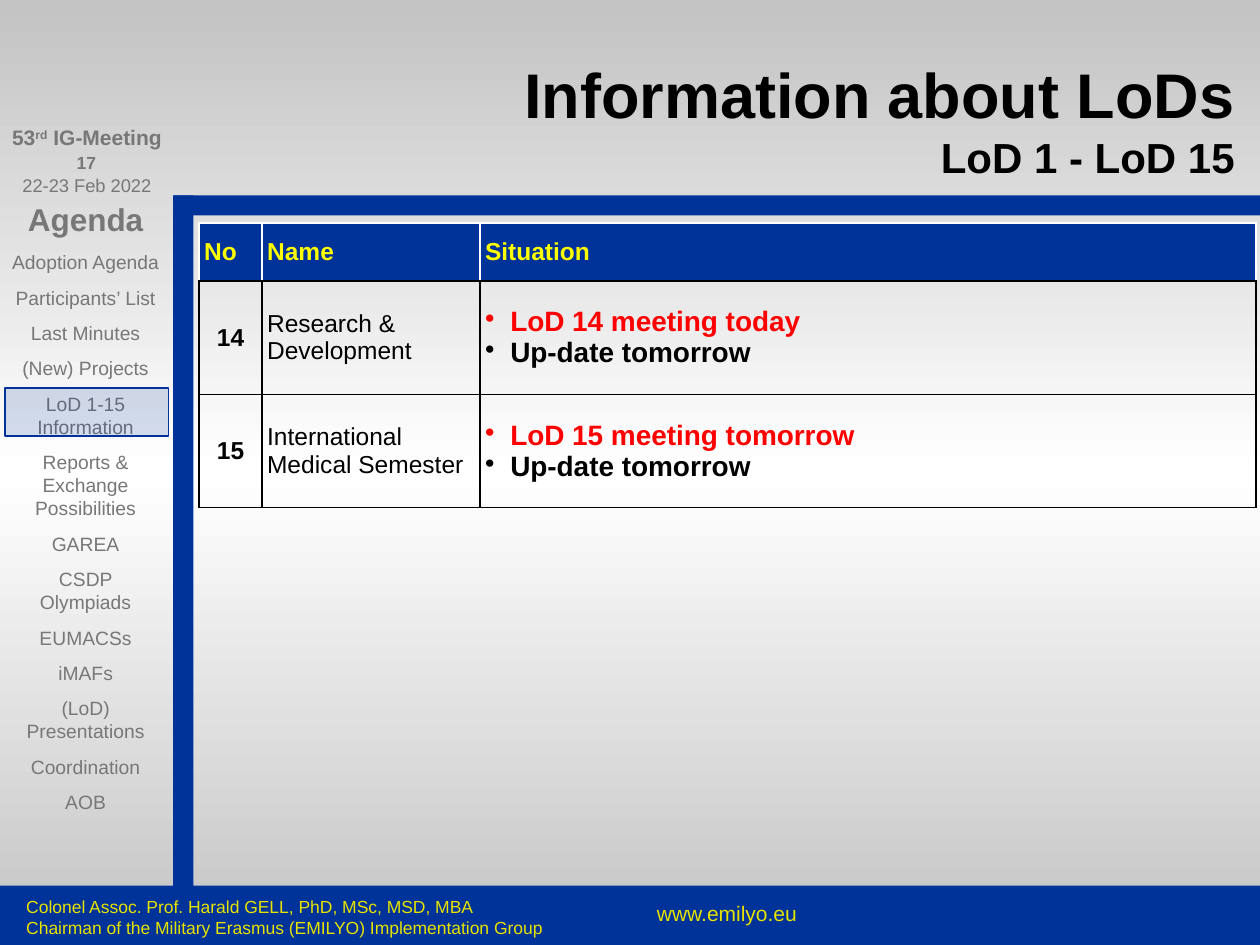
from dataclasses import dataclass
from typing import Optional

from lxml import etree
from pptx import Presentation
from pptx import util as u
from pptx.dml.color import RGBColor
from pptx.enum import shapes, text
from pptx.oxml import parse_xml
from pptx.oxml.ns import nsdecls, qn


@dataclass(frozen=True)
class Theme:
    font: str = "Arial"
    blue: str = "003399"
    grey: str = "777777"
    silver: str = "C3C3C3"
    white: str = "FFFFFF"
    black: str = "000000"
    red: str = "FF0000"
    header: str = "FFFF00"
    footer: str = "E7E200"
    title: float = 36
    subtitle: float = 24
    agenda: float = 18
    strong: float = 16
    table: float = 14
    meeting: float = 12
    item: float = 11
    date: float = 10.5
    small: float = 10


@dataclass(frozen=True)
class Area:
    """Left, top, width and height in percent of the slide."""
    left: float
    top: float
    width: float
    height: float

    def emu(self) -> tuple:
        return across(self.left), down(self.top), across(self.width), down(self.height)


@dataclass(frozen=True)
class Run:
    text: str
    size: float
    color: str
    bold: bool = False
    baseline: int = 0


@dataclass(frozen=True)
class Para:
    runs: tuple
    align: text.PP_ALIGN = text.PP_ALIGN.LEFT
    before: float = 0
    after: float = 0
    bullet: bool = False


T = Theme()
W, H = u.Inches(10), u.Inches(7.5)
CENTER, RIGHT = text.PP_ALIGN.CENTER, text.PP_ALIGN.RIGHT
AGENDA = ["Adoption Agenda", "Participants’ List", "Last Minutes", "(New) Projects",
          "LoD 1-15 Information", "Reports & Exchange Possibilities", "GAREA",
          "CSDP Olympiads", "EUMACSs", "iMAFs", "(LoD) Presentations",
          "Coordination", "AOB"]
HEADINGS = ["No", "Name", "Situation"]
LODS = [("14", "Research & Development", "LoD 14 meeting today"),
        ("15", "International Medical Semester", "LoD 15 meeting tomorrow")]
COLUMNS, ROWS = (5, 17.3, 61.6), (6.13, 12, 12)


def across(share: float) -> int:
    return round(W * share / 100)


def down(share: float) -> int:
    return round(H * share / 100)


def rgb(color: str) -> RGBColor:
    return RGBColor.from_string(color)


def write(tf, paras: list) -> None:
    for i, para in enumerate(paras):
        p = tf.paragraphs[0] if i == 0 else tf.add_paragraph()
        p.alignment = para.align
        p.space_before, p.space_after = u.Pt(para.before), u.Pt(para.after)
        if para.bullet:
            pPr = p._p.get_or_add_pPr()
            pPr.set("marL", str(u.Inches(0.2)))
            pPr.set("indent", str(-u.Inches(0.2)))
            etree.SubElement(pPr, qn("a:buChar"), char="•")
        for i, run in enumerate(para.runs):
            if run is None:
                p.add_line_break()
                continue
            r = p.add_run()
            r.text = run.text
            r.font.name, r.font.size, r.font.bold = T.font, u.Pt(run.size), run.bold
            r.font.color.rgb = rgb(run.color)
            if run.baseline:
                r._r.get_or_add_rPr().set("baseline", str(run.baseline * 1000))


def add_text(s, area: Area, paras: list, inset: Optional[float] = None,
             wrap: bool = True, anchor=text.MSO_ANCHOR.TOP) -> None:
    tf = s.shapes.add_textbox(*area.emu()).text_frame
    tf.word_wrap, tf.vertical_anchor = wrap, anchor
    if inset is not None:
        tf.margin_left = tf.margin_right = tf.margin_top = tf.margin_bottom = u.Inches(inset)
    write(tf, paras)


def add_bar(s, area: Area, opacity: int = 100, outline: bool = False) -> None:
    sp = s.shapes.add_shape(shapes.MSO_SHAPE.RECTANGLE, *area.emu())
    sp.shadow.inherit = False
    sp.fill.solid()
    sp.fill.fore_color.rgb = rgb(T.blue)
    if opacity < 100:
        color = sp._element.spPr.find(qn("a:solidFill"))[0]
        etree.SubElement(color, qn("a:alpha"), val=str(opacity * 1000))
    if outline:
        sp.line.color.rgb, sp.line.width = rgb(T.blue), u.Pt(0.75)
    else:
        sp.line.fill.background()


def fill_cell(cell, paras: list, header: bool) -> None:
    cell.vertical_anchor = text.MSO_ANCHOR.MIDDLE
    cell.margin_left = cell.margin_right = u.Inches(0.04)
    cell.margin_top = cell.margin_bottom = u.Inches(0.05)
    write(cell.text_frame, paras)
    for side in "LRTB":
        color = T.white if header and side != "B" else T.black
        cell._tc.get_or_add_tcPr().append(parse_xml(
            f'<a:ln{side} {nsdecls("a")} w="12700"><a:solidFill>'
            f'<a:srgbClr val="{color}"/></a:solidFill></a:ln{side}>'))
    if header:
        cell.fill.solid()
        cell.fill.fore_color.rgb = rgb(T.blue)
    else:
        cell.fill.background()


def add_lod_table(s, area: Area) -> None:
    table = s.shapes.add_table(len(ROWS), len(COLUMNS), *area.emu()).table
    table.first_row = table.horz_banding = False
    for column, share in zip(table.columns, COLUMNS):
        column.width = across(share)
    for row, share in zip(table.rows, ROWS):
        row.height = down(share)
    grid = [[[Para((Run(h, T.table, T.header, True),))] for h in HEADINGS]]
    for number, name, meeting in LODS:
        grid.append([
            [Para((Run(number, T.table, T.black, True),), CENTER)],
            [Para((Run(name, T.table, T.black),))],
            [Para((Run(meeting, T.strong, T.red, True),), bullet=True),
             Para((Run("Up-date tomorrow", T.strong, T.black, True),), bullet=True)]])
    for i, row in enumerate(grid):
        for j, paras in enumerate(row):
            fill_cell(table.cell(i, j), paras, header=i == 0)


def set_background(s) -> None:
    stops = "".join(f'<a:gs {nsdecls("a")} pos="{pos * 1000}"><a:srgbClr val="{c}"/></a:gs>'
                    for pos, c in ((0, T.silver), (50, T.white), (100, T.silver)))
    fill = s.background.fill
    fill.gradient()
    fill.gradient_angle = 90
    gs_lst = next(s._element.iter(qn("a:gsLst")))
    gs_lst[:] = list(parse_xml(f'<a:gsLst {nsdecls("a")}>{stops}</a:gsLst>'))


def main() -> None:
    prs = Presentation()
    prs.slide_width, prs.slide_height = W, H
    s = prs.slides.add_slide(prs.slide_layouts[6])
    set_background(s)

    # Frame bars
    add_bar(s, Area(13.75, 20.67, 1.6, 74.8))
    add_bar(s, Area(13.8, 20.67, 86.2, 2.13))

    # Sidebar: meeting, slide number and agenda
    add_text(s, Area(4.4, 15.47, 4.9, 3.6),
             [Para((Run("17", T.small, T.grey, True),), CENTER)], wrap=False)
    add_text(s, Area(0.5, 20.67, 12.6, 72.4),
             [Para((Run("Agenda", T.agenda, T.grey, True),), CENTER, after=7)]
             + [Para((Run(item, T.item, T.grey),), CENTER, after=7) for item in AGENDA],
             inset=0.04)
    meeting = (Run("53", T.meeting, T.grey, True), Run("rd", T.meeting, T.grey, True, 30),
               Run(" IG-Meeting", T.meeting, T.grey, True))
    add_text(s, Area(0, 13.2, 13.8, 8.8),
             [Para(meeting, CENTER),
              Para((Run("22-23 Feb 2022", T.date, T.grey),), CENTER, before=14)], inset=0)

    # Footer
    add_bar(s, Area(0, 93.73, 100, 6.27))
    add_text(s, Area(49, 94.67, 17.4, 4.67),
             [Para((Run("www.emilyo.eu", T.meeting, T.footer),), CENTER)])
    add_text(s, Area(1.1, 94.13, 43.8, 4.67),
             [Para((Run(line, T.small, T.footer),)) for line in (
                 "Colonel Assoc. Prof. Harald GELL, PhD, MSc, MSD, MBA",
                 "Chairman of the Military Erasmus (EMILYO) Implementation Group")])

    # Title
    add_text(s, Area(13.8, 2.53, 84.2, 16.67),
             [Para((Run("Information about LoDs", T.title, T.black, True), None,
                    Run("LoD 1 - LoD 15", T.subtitle, T.black, True)), RIGHT)],
             inset=0, anchor=text.MSO_ANCHOR.BOTTOM)

    # Table and the current agenda item
    add_lod_table(s, Area(15.8, 23.6, sum(COLUMNS), sum(ROWS)))
    add_bar(s, Area(0.4, 41.07, 13, 5.07), opacity=16, outline=True)

    prs.save("out.pptx")


if __name__ == "__main__":
    main()
